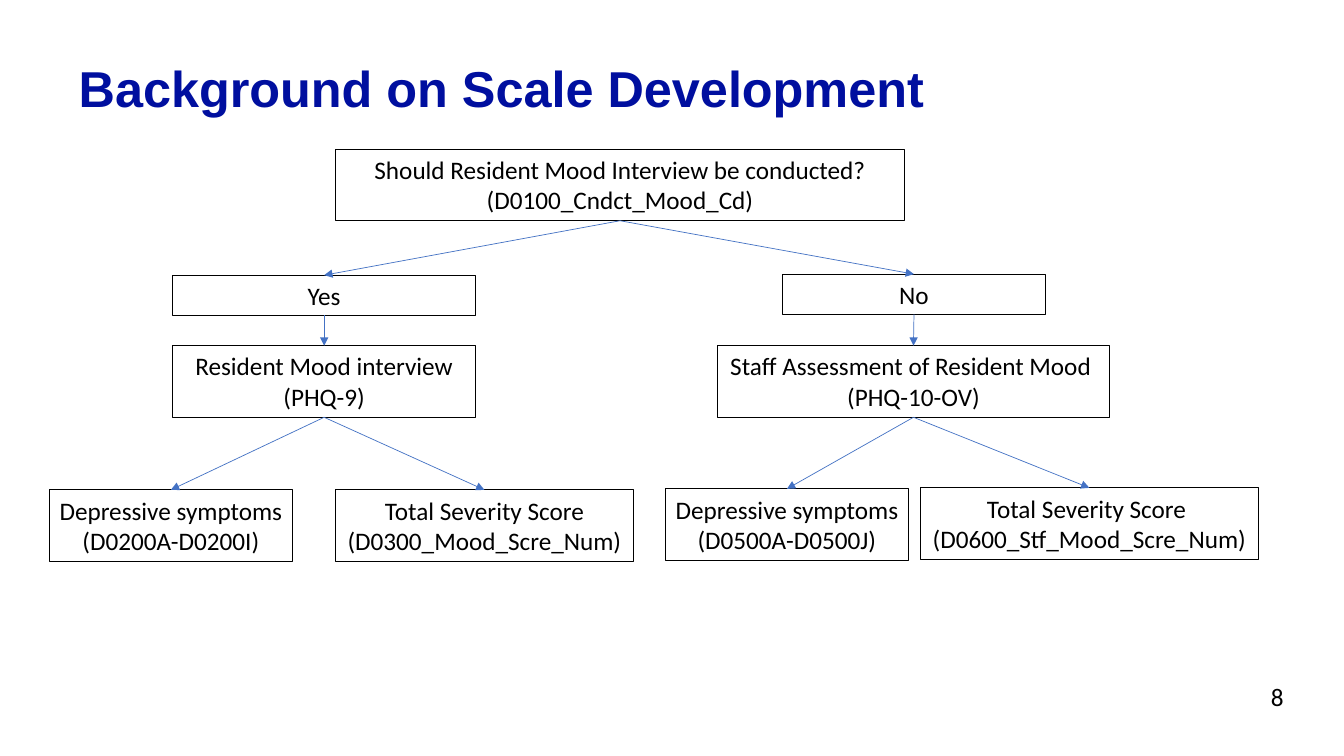
from pptx import Presentation
from pptx.dml.color import RGBColor
from pptx.enum.shapes import MSO_CONNECTOR, MSO_SHAPE
from pptx.enum.text import MSO_ANCHOR, MSO_AUTO_SIZE, PP_ALIGN
from pptx.oxml.ns import qn
from pptx.util import Inches, Pt
from lxml import etree

LEFT, CENTER, RIGHT = PP_ALIGN.LEFT, PP_ALIGN.CENTER, PP_ALIGN.RIGHT
TOP, MIDDLE = MSO_ANCHOR.TOP, MSO_ANCHOR.MIDDLE
FIT_SHAPE, FIT_NONE = MSO_AUTO_SIZE.SHAPE_TO_FIT_TEXT, MSO_AUTO_SIZE.NONE
RECTANGLE, STRAIGHT = MSO_SHAPE.RECTANGLE, MSO_CONNECTOR.STRAIGHT
TITLE_ONLY = 5
TOP_SITE, BOTTOM_SITE = 0, 2

COLORS = {"title": "000F9F", "text": "000000", "border": "000000", "arrow": "4472C4"}
ONE_LINE, TWO_LINES = 0.4, 0.71


def color(name):
    return RGBColor.from_string(COLORS[name])


def write_text(shape, text, font="Calibri", size=18, bold=False, text_color="text",
               align=CENTER, anchor=TOP, line_spacing=None, wrap=True, fit=FIT_NONE):
    """Fill a shape with text, one paragraph per line."""
    frame = shape.text_frame
    frame.text = text
    frame.word_wrap = wrap
    frame.auto_size = fit
    frame.vertical_anchor = anchor
    for paragraph in frame.paragraphs:
        paragraph.alignment = align
        paragraph.line_spacing = line_spacing
        paragraph.font.name = font
        paragraph.font.size = Pt(size)
        paragraph.font.bold = bold
        paragraph.font.color.rgb = color(text_color)


class FlowSlide:
    def __init__(self, presentation):
        self.slide = presentation.slides.add_slide(presentation.slide_layouts[TITLE_ONLY])

    def title(self, text, left, top, width, height):
        shape = self.slide.shapes.title
        shape.left, shape.top = Inches(left), Inches(top)
        shape.width, shape.height = Inches(width), Inches(height)
        write_text(shape, text, font="Arial", size=36, bold=True, text_color="title",
                   align=LEFT, line_spacing=0.9)

    def page_number(self, text, left, top, width, height):
        shape = self.slide.shapes.add_textbox(
            Inches(left), Inches(top), Inches(width), Inches(height))
        write_text(shape, text, align=RIGHT, anchor=MIDDLE)

    def box(self, text, left, top, width, height=TWO_LINES, wrap=True):
        shape = self.slide.shapes.add_shape(
            RECTANGLE, Inches(left), Inches(top), Inches(width), Inches(height))
        shape.shadow.inherit = False
        shape.fill.background()
        shape.line.color.rgb = color("border")
        shape.line.width = Pt(0.75)
        write_text(shape, text, wrap=wrap, fit=FIT_SHAPE)
        return shape

    def arrow(self, parent, child):
        """Join the bottom of parent to the top of child."""
        connector = self.slide.shapes.add_connector(STRAIGHT, 0, 0, 0, 0)
        connector.begin_connect(parent, BOTTOM_SITE)
        connector.end_connect(child, TOP_SITE)
        connector.line.color.rgb = color("arrow")
        connector.line.width = Pt(0.5)
        properties = connector.element.spPr
        etree.SubElement(properties.find(qn("a:ln")), qn("a:tailEnd"), type="triangle")
        etree.SubElement(properties, qn("a:effectLst"))


def main():
    presentation = Presentation()
    presentation.slide_width, presentation.slide_height = Inches(13.33), Inches(7.5)
    flow = FlowSlide(presentation)
    flow.title("Background on Scale Development", 0.68, 0.58, 12.17, 0.9)
    flow.page_number("8", 9.83, 6.71, 3, 0.4)

    question = flow.box(
        "Should Resident Mood Interview be conducted?\n(D0100_Cndct_Mood_Cd)", 3.33, 1.48, 5.64)
    yes = flow.box("Yes", 1.71, 2.73, 3.01, ONE_LINE)
    no = flow.box("No", 7.76, 2.72, 2.61, ONE_LINE)
    interview = flow.box("Resident Mood interview (PHQ-9)", 1.71, 3.43, 3.01)
    staff = flow.box("Staff Assessment of Resident Mood \n(PHQ-10-OV)", 7.12, 3.43, 3.88)

    outcomes = [
        (interview, "Depressive symptoms\n(D0200A-D0200I)", 0.49, 4.86, 2.41),
        (interview, "Total Severity Score\n(D0300_Mood_Scre_Num)", 3.33, 4.86, 2.95),
        (staff, "Depressive symptoms\n(D0500A-D0500J)", 6.6, 4.85, 2.41),
        (staff, "Total Severity Score \n(D0600_Stf_Mood_Scre_Num)", 9.13, 4.84, 3.35),
    ]
    links = [(question, yes), (question, no), (yes, interview), (no, staff)]
    for assessment, text, left, top, width in outcomes:
        links.append((assessment, flow.box(text, left, top, width, wrap=False)))
    for parent, child in links:
        flow.arrow(parent, child)

    presentation.save("out.pptx")


if __name__ == "__main__":
    main()
